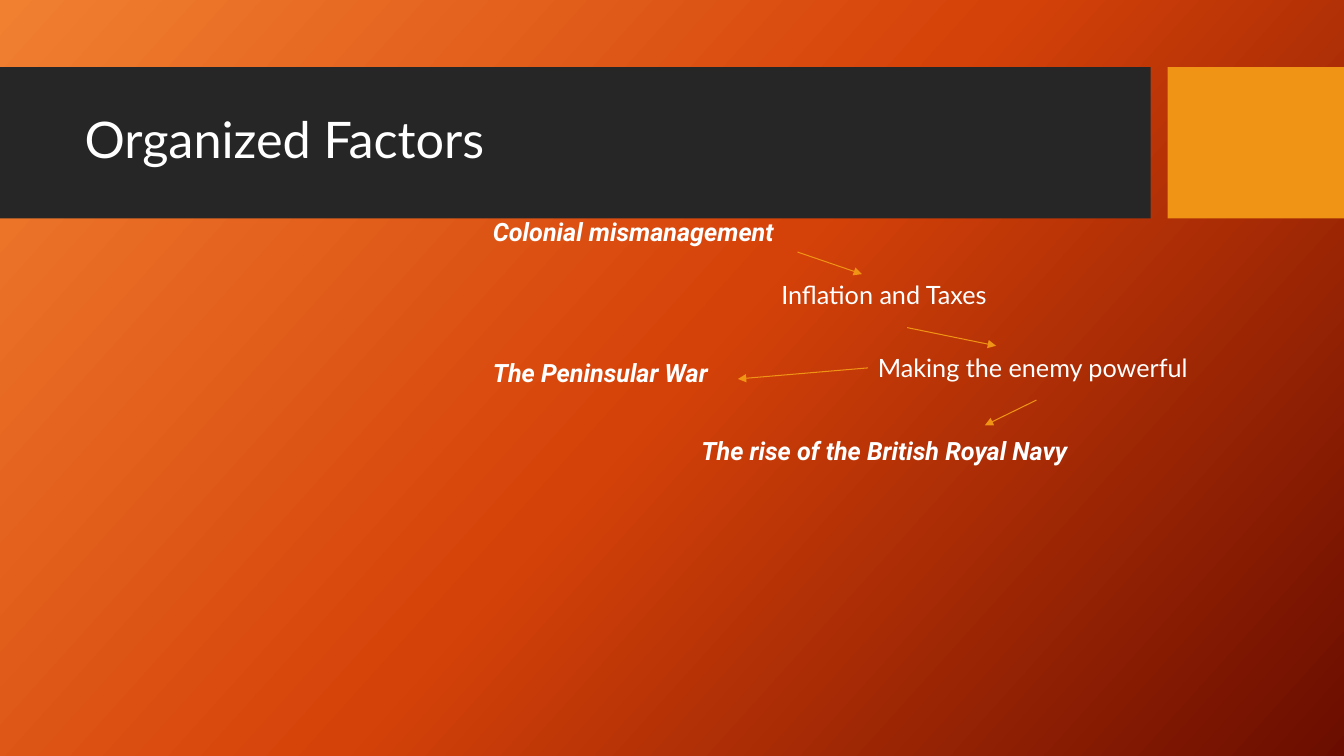
from copy import deepcopy

from pptx import Presentation
from pptx.dml.color import RGBColor
from pptx.enum.shapes import MSO_CONNECTOR, MSO_SHAPE
from pptx.enum.text import MSO_ANCHOR, MSO_AUTO_SIZE, PP_ALIGN
from pptx.oxml.ns import qn
from pptx.util import Pt

RECT = MSO_SHAPE.RECTANGLE
STRAIGHT = MSO_CONNECTOR.STRAIGHT
MIDDLE = MSO_ANCHOR.MIDDLE
NO_FIT, GROW = MSO_AUTO_SIZE.NONE, MSO_AUTO_SIZE.SHAPE_TO_FIT_TEXT
LEFT = PP_ALIGN.LEFT

SLIDE_W, SLIDE_H = 960, 540
WHITE, CHARCOAL, AMBER = "FFFFFF", "262626", "F09415"
BACKGROUND = [(0, "F18031"), (0.5, "D54209"), (1, "6A0D00")]
LABEL_H = 28.8

# text, left, top, width, is a main factor; positions relative to the diagram
FACTORS = [
    ("Inflation and Taxes", 206, 44.6, 175, False),
    ("Colonial mismanagement", 0, 0, 257, True),
    ("Making the enemy powerful", 275, 97.2, 248.4, False),
    ("The rise of the British Royal Navy", 149, 156.2, 316.8, True),
    ("The Peninsular War", 0, 100.8, 221, True),
]
# start x, start y, end x, end y
ARROWS = [
    (224.6, 28.8, 270.7, 44.6),
    (303, 82.8, 366.5, 95.8),
    (395.3, 134.6, 358.5, 152.6),
    (275, 111.6, 182.1, 119.5),
]


def rgb(color):
    return RGBColor.from_string(color)


def style(font, size, name, bold=False):
    """Format white text; bold text is also italic."""
    font.size, font.name = Pt(size), name
    font.bold = font.italic = bold
    font.color.rgb = rgb(WHITE)


def paint_background(s):
    fill = s.background.fill
    fill.gradient()
    fill.gradient_angle = 360 - 42
    stop_list = s.element.find(".//" + qn("a:gsLst"))
    stop_list.append(deepcopy(stop_list[-1]))
    for stop, (position, color) in zip(fill.gradient_stops, BACKGROUND):
        stop.position = position
        stop.color.rgb = rgb(color)


def add_block(s, x, y, w, h, color):
    sp = s.shapes.add_shape(RECT, Pt(x), Pt(y), Pt(w), Pt(h))
    sp.shadow.inherit = False
    sp.fill.solid()
    sp.fill.fore_color.rgb = rgb(color)
    sp.line.fill.background()


def add_banner(s, x, y, w, h, text):
    accent_w, gap = 126, 12
    bar_w = w - accent_w - gap
    add_block(s, x, y, bar_w, h, CHARCOAL)
    add_block(s, x + w - accent_w, y, accent_w, h, AMBER)

    title = s.shapes.title
    title.left, title.top = Pt(x + 53.25), Pt(y + 11)
    title.width, title.height = Pt(756.75), Pt(85)
    s.shapes._spTree.append(title._element)  # bring in front of the bar
    tf = title.text_frame
    tf.text = text
    tf.auto_size, tf.vertical_anchor, tf.word_wrap = NO_FIT, MIDDLE, True
    p = tf.paragraphs[0]
    p.alignment, p.line_spacing = LEFT, 0.9
    style(p.runs[0].font, 36, "Lato")


def add_label(s, x, y, w, text, main):
    sp = s.shapes.add_textbox(Pt(x), Pt(y), Pt(w), Pt(LABEL_H))
    tf = sp.text_frame
    tf.text = text
    tf.word_wrap, tf.auto_size = True, GROW
    style(tf.paragraphs[0].runs[0].font, 18, "Roboto" if main else "Lato", main)
    return sp


def add_arrow(s, x1, y1, x2, y2):
    line = s.shapes.add_connector(STRAIGHT, Pt(x1), Pt(y1), Pt(x2), Pt(y2))
    line.line.color.rgb = rgb(AMBER)
    line.line.width = Pt(0.75)
    ln = line.line._get_or_add_ln()
    ln.append(ln.makeelement(qn("a:tailEnd"), {"type": "triangle"}))
    props = line._element.spPr
    props.append(props.makeelement(qn("a:effectLst"), {}))
    return line


def add_diagram(s, x, y):
    labels = {text: add_label(s, x + dx, y + dy, w, text, main)
              for text, dx, dy, w, main in FACTORS}
    arrows = [add_arrow(s, x + x1, y + y1, x + x2, y + y2)
              for x1, y1, x2, y2 in ARROWS]
    arrows[-1].begin_connect(labels["Making the enemy powerful"], 1)


def main():
    prs = Presentation()
    prs.slide_width, prs.slide_height = Pt(SLIDE_W), Pt(SLIDE_H)
    s = prs.slides.add_slide(prs.slide_layouts[5])
    paint_background(s)
    add_banner(s, 0, 48, SLIDE_W, 108, "Organized Factors")
    add_diagram(s, 345, 151.2)
    prs.save("out.pptx")


if __name__ == "__main__":
    main()
